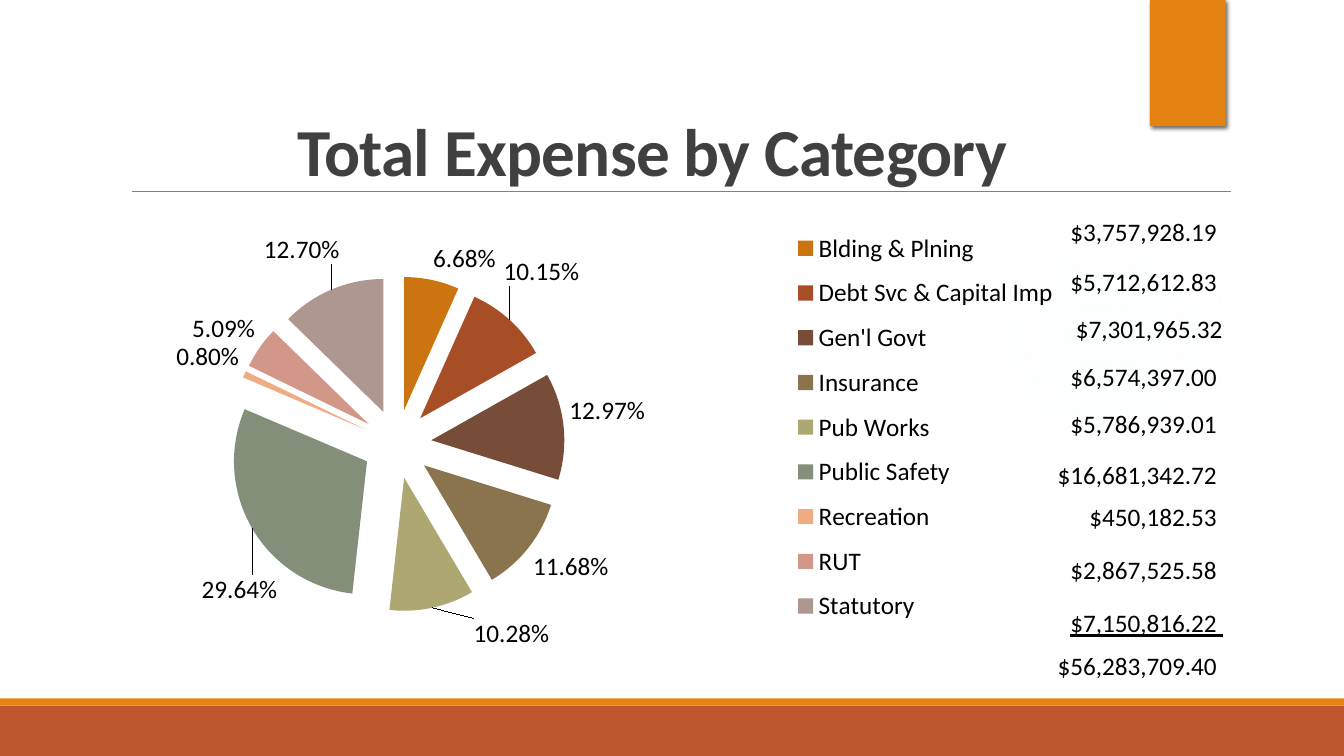
from dataclasses import dataclass

import pptx
import pptx.chart.data
import pptx.dml.color
import pptx.enum.chart
import pptx.enum.shapes
import pptx.enum.text
import pptx.oxml
import pptx.oxml.ns
import pptx.util
from pptx.util import Cm


@dataclass(frozen=True)
class Theme:
    font: str = "Calibri"
    title_size: int = 48
    body_size: int = 18
    orange: str = "E48312"
    rust: str = "BD582C"
    rule: str = "808080"
    title: str = "404040"
    text: str = "000000"
    glow: str = "E0EBF2"


THEME = Theme()

# Category, share of the total, slice colour, amount
EXPENSES = [
    ("Blding & Plning", 0.0668, "CC7510", "$3,757,928.19 "),
    ("Debt Svc & Capital Imp", 0.1015, "A84E27", "$5,712,612.83 "),
    ("Gen'l Govt", 0.1297, "774C39", "$7,301,965.32"),
    ("Insurance", 0.1168, "8A744E", "$6,574,397.00 "),
    ("Pub Works", 0.1028, "ADA772", "$5,786,939.01 "),
    ("Public Safety", 0.2964, "848F79", "$16,681,342.72 "),
    ("Recreation", 0.008, "EFAB82", "$450,182.53 "),
    ("RUT", 0.0509, "D29789", "$2,867,525.58 "),
    ("Statutory", 0.127, "AE978F", "$7,150,816.22 "),
]
TOTAL = "$56,283,709.40 "
ROW_HEIGHTS = [1.35, 1.27, 1.17, 1.22, 1.19, 1.27, 1.07, 1.32, 1.35, 1.09]

# Labels moved away from their slices, as shares of the chart size
LABEL_SHIFTS = {1: (-0.01, -0.06), 4: (0.04, 0.01), 5: (0.03, 0.09), 8: (0.01, -0.04)}

NAMESPACES = pptx.oxml.ns.nsdecls("a")
SHADOW = (
    f'<a:effectLst {NAMESPACES}><a:outerShdw blurRad="38100" dist="25400" dir="2700000">'
    '<a:srgbClr val="000000"><a:alpha val="60000"/></a:srgbClr></a:outerShdw></a:effectLst>'
)


def rgb(value):
    return pptx.dml.color.RGBColor.from_string(value)


def style_font(font, size, color):
    font.name = THEME.font
    font.size = pptx.util.Pt(size)
    font.color.rgb = rgb(color)


def add_run(paragraph, text, size, color):
    run = paragraph.add_run()
    run.text = text
    style_font(run.font, size, color)
    return run


def add_block(slide, color, left, top, width, height, kind="RECTANGLE"):
    shape_type = pptx.enum.shapes.MSO_SHAPE[kind]
    shape = slide.shapes.add_shape(shape_type, Cm(left), Cm(top), Cm(width), Cm(height))
    shape.shadow.inherit = False
    shape.fill.solid()
    shape.fill.fore_color.rgb = rgb(color)
    shape.line.fill.background()
    return shape


def add_glow(slide):
    glow = add_block(slide, THEME.glow, 23.9, 4.65, 7.82, 7.82, "OVAL")
    stops = "".join(
        f'<a:gs pos="{place}000"><a:srgbClr val="{THEME.glow}">'
        f'<a:alpha val="{alpha}000"/></a:srgbClr></a:gs>'
        for place, alpha in ((0, 7), (36, 6), (69, 0))
    )
    gradient = pptx.oxml.parse_xml(
        f'<a:gradFill {NAMESPACES}><a:gsLst>{stops}</a:gsLst><a:path path="circle">'
        '<a:fillToRect l="50000" t="50000" r="50000" b="50000"/></a:path></a:gradFill>'
    )
    properties = glow.element.spPr
    properties.replace(properties.find(pptx.oxml.ns.qn("a:solidFill")), gradient)


def add_tab(slide):
    tab = add_block(slide, THEME.orange, 28.98, 0, 1.91, 3.18)
    properties = tab.element.spPr
    effects = properties.find(pptx.oxml.ns.qn("a:effectLst"))
    properties.replace(effects, pptx.oxml.parse_xml(SHADOW))


def add_rule(slide, left, right, top):
    rule = slide.shapes.add_connector(
        pptx.enum.shapes.MSO_CONNECTOR.STRAIGHT, Cm(left), Cm(top), Cm(right), Cm(top)
    )
    rule.line.color.rgb = rgb(THEME.rule)
    rule.line.width = pptx.util.Pt(0.5)
    rule.element.spPr.append(pptx.oxml.parse_xml(f"<a:effectLst {NAMESPACES}/>"))


def add_title(slide, text):
    box = slide.shapes.add_textbox(Cm(3.05), Cm(0.89), Cm(27.94), Cm(4.04))
    frame = box.text_frame
    frame.word_wrap = True
    frame.vertical_anchor = pptx.enum.text.MSO_ANCHOR.BOTTOM
    paragraph = frame.paragraphs[0]
    paragraph.alignment = pptx.enum.text.PP_ALIGN.CENTER
    paragraph.line_spacing = 0.85
    run = add_run(paragraph, text, THEME.title_size, THEME.title)
    run.font.bold = True
    run.font._element.set("spc", "-50")


def add_amounts(slide, amounts):
    frame = slide.shapes.add_table(
        len(amounts), 1, Cm(25.02), Cm(4.9), Cm(5.82), Cm(sum(ROW_HEIGHTS))
    )
    table = frame.table
    table.first_row = False
    table.horz_banding = False
    for index, (amount, height) in enumerate(zip(amounts, ROW_HEIGHTS)):
        table.rows[index].height = Cm(height)
        cell = table.cell(index, 0)
        cell.fill.background()
        cell.margin_left = cell.margin_right = cell.margin_top = Cm(0.03)
        cell.margin_bottom = 0
        cell.vertical_anchor = pptx.enum.text.MSO_ANCHOR.BOTTOM
        paragraph = cell.text_frame.paragraphs[0]
        paragraph.alignment = pptx.enum.text.PP_ALIGN.RIGHT
        run = add_run(paragraph, amount, THEME.body_size, THEME.text)
        # The last amount before the total carries the sum line
        run.font.underline = index == len(amounts) - 2


def manual_layout(mode="", **places):
    modes = "".join(f'<c:{axis}Mode val="edge"/>' for axis in "xy") if mode else ""
    values = "".join(f'<c:{name} val="{value}"/>' for name, value in places.items())
    target = '<c:layoutTarget val="inner"/>' if mode == "plot" else ""
    return pptx.oxml.parse_xml(
        f'<c:layout {pptx.oxml.ns.nsdecls("c")}><c:manualLayout>'
        f"{target}{modes}{values}</c:manualLayout></c:layout>"
    )


def add_pie(slide):
    data = pptx.chart.data.CategoryChartData(number_format="0.00%")
    data.categories = [expense[0] for expense in EXPENSES]
    data.add_series("Series 1", [expense[1] for expense in EXPENSES])
    chart = slide.shapes.add_chart(
        pptx.enum.chart.XL_CHART_TYPE.PIE, Cm(1.63), Cm(4.67), Cm(25.37), Cm(12.07), data
    ).chart
    chart.has_title = False
    style_font(chart.font, THEME.body_size, THEME.text)
    plot = chart.plots[0]
    plot.vary_by_categories = True
    series = plot.series[0]

    # Slices
    for index, expense in enumerate(EXPENSES):
        fill = series.points[index].format.fill
        fill.solid()
        fill.fore_color.rgb = rgb(expense[2])
    explosion = pptx.oxml.parse_xml(
        f'<c:explosion {pptx.oxml.ns.nsdecls("c")} val="26"/>'
    )
    series._element.find(pptx.oxml.ns.qn("c:dPt")).addprevious(explosion)

    # Labels
    outside = pptx.enum.chart.XL_LABEL_POSITION.OUTSIDE_END
    labels = series.data_labels
    labels.show_value = True
    labels.number_format = "0.00%"
    labels.number_format_is_linked = False
    labels.position = outside
    for index, (x, y) in LABEL_SHIFTS.items():
        series.points[index].data_label.position = outside
        label = labels._element.xpath(f"c:dLbl[c:idx/@val='{index}']")[0]
        label.find(pptx.oxml.ns.qn("c:idx")).addnext(manual_layout(x=x, y=y))

    # Legend and plot places
    chart.has_legend = True
    legend = chart.legend
    legend.position = pptx.enum.chart.XL_LEGEND_POSITION.RIGHT
    legend.include_in_layout = False
    style_font(legend.font, THEME.body_size, THEME.text)
    legend._element.find(pptx.oxml.ns.qn("c:legendPos")).addnext(
        manual_layout("legend", x=0.72, y=0.07, w=0.27, h=0.87)
    )
    area = plot._element.getparent()
    for old_layout in area.findall(pptx.oxml.ns.qn("c:layout")):
        area.remove(old_layout)
    area.insert(0, manual_layout("plot", x=0, y=0.19, w=0.66, h=0.7))


def main():
    presentation = pptx.Presentation()
    presentation.slide_width = Cm(33.87)
    presentation.slide_height = Cm(19.05)
    slide = presentation.slides.add_slide(presentation.slide_layouts[6])

    # Frame of the slide
    add_block(slide, THEME.rust, 0, 17.78, 33.87, 1.27)
    add_block(slide, THEME.orange, 0, 17.6, 33.87, 0.18)
    add_rule(slide, 3.33, 31.01, 4.83)
    add_glow(slide)
    add_tab(slide)

    # Content
    add_title(slide, "Total Expense by Category\t")
    add_amounts(slide, [expense[3] for expense in EXPENSES] + [TOTAL])
    add_pie(slide)

    presentation.save("out.pptx")


if __name__ == "__main__":
    main()
